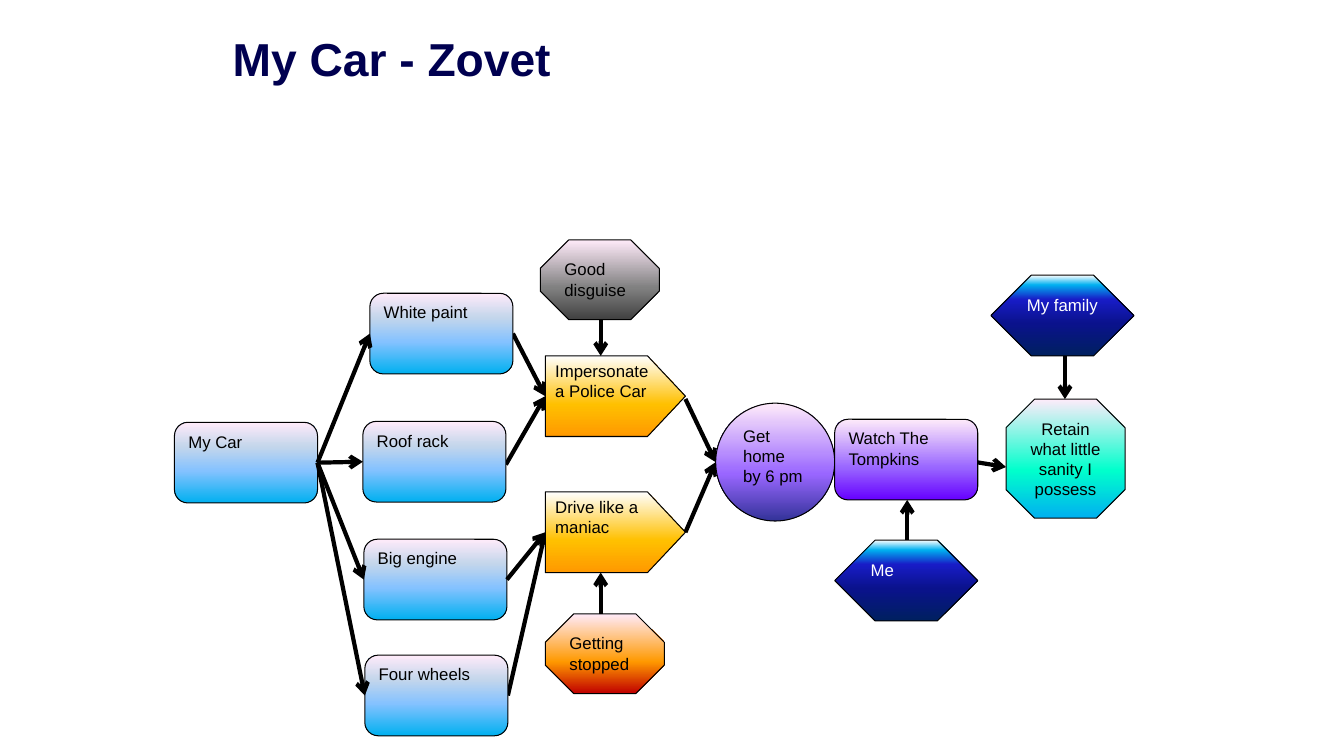
from lxml import etree
from pptx import Presentation
from pptx import util as u
from pptx.dml.color import RGBColor
from pptx.enum import shapes, text
from pptx.oxml.ns import qn

COLORS = {"title": "000050", "dark": "000000", "light": "FFFFFF"}

# Gradient stops run from the bottom edge to the top edge.
GRADIENTS = {
    "feature": [(0, "00B0F0"), (40, "85C2FF"), (70, "C4D6EB"), (100, "FFEBFA")],
    "action": [(0, "FF9900"), (40, "FFC000"), (100, "FFFFFF")],
    "goal": [(0, "333399"), (40, "9966FF"), (100, "FFEBFA")],
    "outcome": [(0, "6600FF"), (40, "9966FF"), (100, "FFEBFA")],
    "value": [(0, "00B0F0"), (40, "00FFCC"), (100, "FFEBFA")],
    "risk": [(0, "C00000"), (40, "FF9900"), (100, "FFEBFA")],
    "need": [(0, "404040"), (40, "808080"), (100, "FFEBFA")],
    "person": [(0, "002060"), (40, "0A128C"), (70, "181CC7"), (88, "00B0F0"), (100, "FFFFFF")],
}

# Kind: preset shape, width, height, adjustment
KINDS = {
    "feature": (shapes.MSO_SHAPE.ROUNDED_RECTANGLE, 102.2, 57.6, None),
    "action": (shapes.MSO_SHAPE.PENTAGON, 100.1, 57.6, 0.47),
    "goal": (shapes.MSO_SHAPE.OVAL, 85, 84.2, None),
    "outcome": (shapes.MSO_SHAPE.ROUNDED_RECTANGLE, 102.2, 57.6, None),
    "value": (shapes.MSO_SHAPE.OCTAGON, 85, 85, 0.24),
    "risk": (shapes.MSO_SHAPE.OCTAGON, 85, 56.9, 0.357),
    "need": (shapes.MSO_SHAPE.OCTAGON, 85, 56.9, 0.357),
    "person": (shapes.MSO_SHAPE.HEXAGON, 102.2, 57.6, 0.5),
}

# Name: kind, left, top, label
NODES = {
    "engine": ("feature", 259.9, 385.2, "Big engine"),
    "sanity": ("value", 718.6, 285.1, "Retain what little sanity I possess"),
    "wheels": ("feature", 260.6, 468, "Four wheels"),
    "rack": ("feature", 259.2, 301, "Roof rack"),
    "paint": ("feature", 264.2, 209.5, "White paint"),
    "police": ("action", 389.5, 254.2, "Impersonate a Police Car"),
    "maniac": ("action", 389.5, 351.4, "Drive like a maniac"),
    "home": ("goal", 511.2, 288, "Get home by 6 pm"),
    "watch": ("outcome", 596.2, 299.5, "Watch The Tompkins"),
    "car": ("feature", 124.6, 301.7, "My Car"),
    "stopped": ("risk", 389.5, 438.5, "Getting stopped"),
    "disguise": ("need", 385.9, 171.4, "Good disguise"),
    "family": ("person", 707.8, 196.6, "My family"),
    "me": ("person", 596.2, 385.9, "Me"),
}

# Source, target, downward shift of the start and of the end
FLOWS_BEHIND = [
    ("paint", "police", 0, 0),
    ("rack", "police", 2, 0),
    ("wheels", "maniac", 0, 0),
    ("maniac", "home", 0, 0),
    ("police", "home", 2, 0),
]
FLOWS_IN_FRONT = [
    ("watch", "sanity", 2, 6),
    ("engine", "maniac", 0, 0),
    ("car", "rack", 0, 0),
    ("car", "engine", 0, 0),
    ("car", "wheels", 0, 0),
    ("car", "paint", 0, 0),
]

# Source, target, horizontal position
DROPS_BEHIND = [("stopped", "maniac", 429.1), ("family", "sanity", 760.7)]
DROPS_IN_FRONT = [("me", "watch", 648), ("disguise", "police", 429.1)]


class Diagram:
    font = "Arial"
    label_size = 12

    def __init__(self, page):
        self.page = page

    def style_text(self, para, size, color, bold=False):
        for span in para.runs:
            span.font.name = self.font
            span.font.size = u.Pt(size)
            span.font.bold = bold
            span.font.color.rgb = RGBColor.from_string(COLORS[color])

    def title(self, words, left, top, width, height):
        box = self.page.shapes.add_textbox(*map(u.Pt, (left, top, width, height)))
        frame = box.text_frame
        frame.word_wrap = True
        frame.vertical_anchor = text.MSO_ANCHOR.MIDDLE
        frame.text = words
        frame.paragraphs[0].line_spacing = 0.9
        self.style_text(frame.paragraphs[0], 33, "title", bold=True)

    def gradient(self, box, stops):
        box.fill.gradient()
        box.fill.gradient_angle = 90
        stop_list = box._element.spPr.find(".//" + qn("a:gsLst"))
        for old_stop in list(stop_list):
            stop_list.remove(old_stop)
        for percent, color in stops:
            stop = etree.SubElement(stop_list, qn("a:gs"), pos=str(percent * 1000))
            etree.SubElement(stop, qn("a:srgbClr"), val=color)

    def node(self, kind, left, top, label):
        preset, width, height, adjustment = KINDS[kind]
        box = self.page.shapes.add_shape(preset, *map(u.Pt, (left, top, width, height)))
        box.shadow.inherit = False
        if adjustment is not None:
            box.adjustments[0] = adjustment
        self.gradient(box, GRADIENTS[kind])
        box.line.color.rgb = RGBColor.from_string(COLORS["dark"])
        box.line.width = u.Pt(0.75)
        frame = box.text_frame
        frame.word_wrap = True
        frame.vertical_anchor = text.MSO_ANCHOR.TOP
        frame.text = label
        para = frame.paragraphs[0]
        para.alignment = text.PP_ALIGN.CENTER if kind == "value" else text.PP_ALIGN.LEFT
        self.style_text(para, self.label_size, "light" if kind == "person" else "dark")

    def arrow(self, start, end):
        link = self.page.shapes.add_connector(
            shapes.MSO_CONNECTOR.STRAIGHT, *map(u.Pt, (*start, *end)))
        link.line.color.rgb = RGBColor.from_string(COLORS["dark"])
        link.line.width = u.Pt(3)
        etree.SubElement(link.line._get_or_add_ln(), qn("a:tailEnd"), type="arrow")
        etree.SubElement(link._element.spPr, qn("a:effectLst"))

    def flow(self, source, target, start_shift, end_shift):
        """Arrow from the middle of the right side to the middle of the left side."""
        left, top, width, height = bounds(source)
        end_left, end_top, _, end_height = bounds(target)
        self.arrow((left + width, top + height / 2 + start_shift),
                   (end_left, end_top + end_height / 2 + end_shift))

    def drop(self, source, target, x):
        """Vertical arrow between the facing edges of two nodes."""
        _, top, _, height = bounds(source)
        _, end_top, _, end_height = bounds(target)
        if top < end_top:
            self.arrow((x, top + height), (x, end_top))
        else:
            self.arrow((x, top), (x, end_top + end_height))


def bounds(name):
    kind, left, top, _ = NODES[name]
    _, width, height, _ = KINDS[kind]
    return left, top, width, height


def main():
    deck = Presentation()
    deck.slide_width, deck.slide_height = u.Pt(960), u.Pt(540)
    diagram = Diagram(deck.slides.add_slide(deck.slide_layouts[6]))
    diagram.title("My Car - Zovet", 159.1, 0, 799.2, 87.8)
    for flow in FLOWS_BEHIND:
        diagram.flow(*flow)
    for drop in DROPS_BEHIND:
        diagram.drop(*drop)
    for node in NODES.values():
        diagram.node(*node)
    for flow in FLOWS_IN_FRONT:
        diagram.flow(*flow)
    for drop in DROPS_IN_FRONT:
        diagram.drop(*drop)
    deck.save("out.pptx")


if __name__ == "__main__":
    main()
